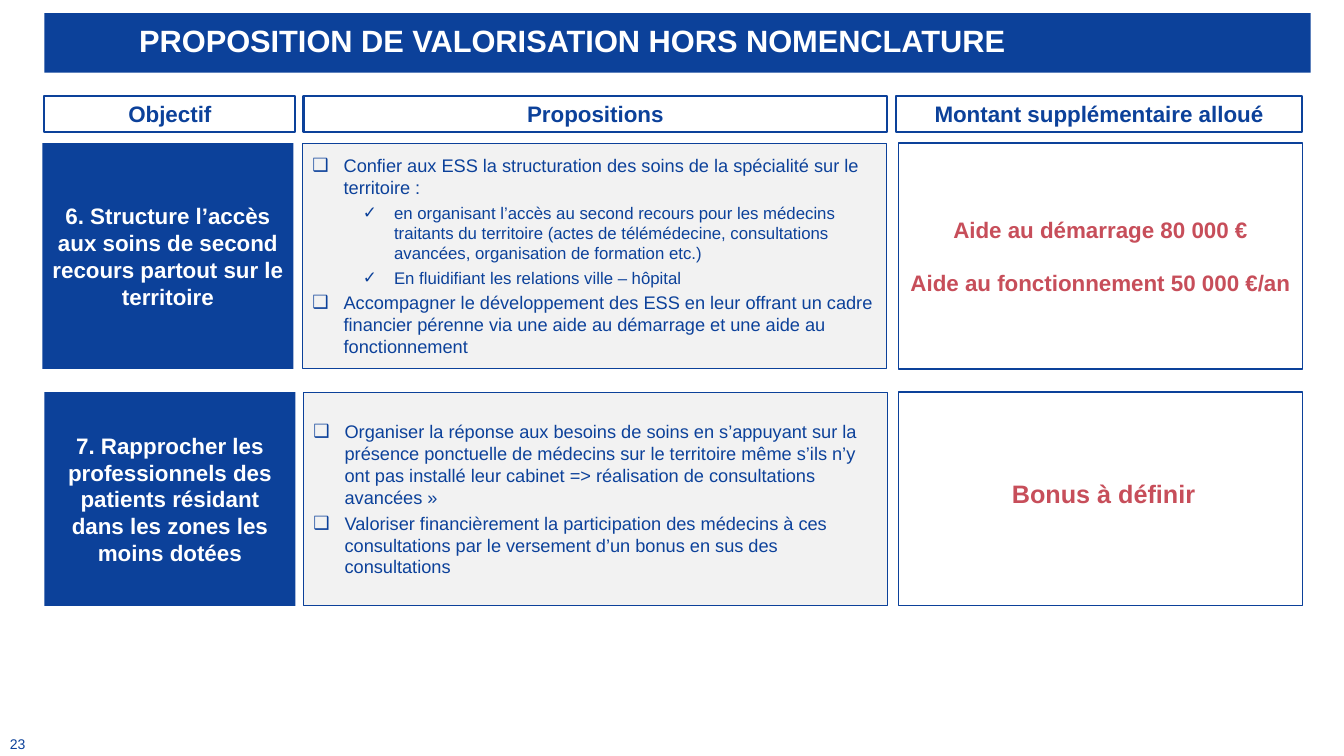
from dataclasses import dataclass

from lxml import etree
from pptx import Presentation
from pptx.dml.color import RGBColor
from pptx.enum.shapes import MSO_SHAPE
from pptx.enum.text import MSO_ANCHOR, PP_ALIGN
from pptx.oxml.ns import qn
from pptx.util import Emu, Pt

RECTANGLE = MSO_SHAPE.RECTANGLE
MIDDLE, BOTTOM = MSO_ANCHOR.MIDDLE, MSO_ANCHOR.BOTTOM
LEFT, CENTER = PP_ALIGN.LEFT, PP_ALIGN.CENTER
EMU_PER_PX = 9144  # 100 px to the inch


@dataclass(frozen=True)
class Theme:
    font: str = "Arial"
    blue: RGBColor = RGBColor(0x0C, 0x41, 0x9A)
    red: RGBColor = RGBColor(0xC7, 0x4E, 0x5A)
    grey: RGBColor = RGBColor(0xF2, 0xF2, 0xF2)
    white: RGBColor = RGBColor(0xFF, 0xFF, 0xFF)
    title: int = 22
    bonus: int = 18
    heading: int = 16
    body: int = 13
    detail: int = 12
    page: int = 10


THEME = Theme()


@dataclass(frozen=True)
class Frame:
    left: int
    top: int
    width: int
    height: int


@dataclass(frozen=True)
class BoxStyle:
    fill: RGBColor | None
    line_width: float = 0


@dataclass(frozen=True)
class Line:
    text: str
    size: int = THEME.heading
    color: RGBColor = THEME.blue
    bold: bool = True
    align: PP_ALIGN = CENTER
    space_before: int = 0
    bullet: str = ""
    indent: int = 0


@dataclass(frozen=True)
class ObjectiveRow:
    lefts: tuple[int, int, int]
    top: int
    height: int
    objective: str
    proposals: list[Line]
    amounts: list[Line]


SOLID = BoxStyle(THEME.blue)
HEADER = BoxStyle(THEME.white, 1.5)
PROPOSAL = BoxStyle(THEME.grey, 0.75)
AMOUNT = BoxStyle(None, 1)
HANGING = 31


def px(length: int) -> Emu:
    return Emu(length * EMU_PER_PX)


def bullet_line(text: str, first: bool = False) -> Line:
    return Line(text, THEME.body, bold=False, align=LEFT, bullet="❑",
                indent=HANGING, space_before=0 if first else 3)


def check_line(text: str) -> Line:
    return Line(text, THEME.detail, bold=False, align=LEFT, bullet="✓",
                indent=81, space_before=3)


def write_lines(text_frame, lines: list[Line]) -> None:
    for index, line in enumerate(lines):
        paragraph = text_frame.paragraphs[0] if index == 0 else text_frame.add_paragraph()
        paragraph.alignment = line.align
        if line.space_before:
            paragraph.space_before = Pt(line.space_before)
        if line.bullet:
            properties = paragraph._p.get_or_add_pPr()
            properties.set("marL", str(px(line.indent)))
            properties.set("indent", str(px(-HANGING)))
            etree.SubElement(properties, qn("a:buFont")).set("typeface", THEME.font)
            etree.SubElement(properties, qn("a:buChar")).set("char", line.bullet)
        run = paragraph.add_run()
        run.text = line.text
        run.font.name = THEME.font
        run.font.size = Pt(line.size)
        run.font.bold = line.bold
        run.font.color.rgb = line.color


def add_box(slide, frame: Frame, style: BoxStyle, lines: list[Line]):
    shape = slide.shapes.add_shape(RECTANGLE, px(frame.left), px(frame.top),
                                   px(frame.width), px(frame.height))
    shape.shadow.inherit = False
    if style.fill is None:
        shape.fill.background()
    else:
        shape.fill.solid()
        shape.fill.fore_color.rgb = style.fill
    if style.line_width:
        shape.line.color.rgb = THEME.blue
        shape.line.width = Pt(style.line_width)
    else:
        shape.line.fill.background()
    shape.text_frame.word_wrap = True
    shape.text_frame.vertical_anchor = MIDDLE
    write_lines(shape.text_frame, lines)
    return shape


def add_text(slide, frame: Frame, line: Line, wrap: bool, anchor: MSO_ANCHOR) -> None:
    box = slide.shapes.add_textbox(px(frame.left), px(frame.top),
                                   px(frame.width), px(frame.height))
    box.text_frame.word_wrap = wrap
    box.text_frame.vertical_anchor = anchor
    write_lines(box.text_frame, [line])


COLUMN_WIDTHS = (249, 579, 401)
HEADERS = [
    (Frame(44, 95, 249, 36), "Objectif"),
    (Frame(301, 95, 579, 36), "Propositions"),
    (Frame(889, 95, 402, 36), "Montant supplémentaire alloué"),
]
ROWS = [
    ObjectiveRow(
        (42, 300, 891), 142, 224,
        "6. Structure l’accès aux soins de second recours partout sur le territoire",
        [
            bullet_line("Confier aux ESS la structuration des soins de la spécialité "
                        "sur le territoire :", first=True),
            check_line("en organisant l’accès au second recours pour les médecins traitants "
                       "du territoire (actes de télémédecine, consultations avancées, "
                       "organisation de formation etc.)"),
            check_line("En fluidifiant les relations ville – hôpital"),
            bullet_line("Accompagner le développement des ESS en leur offrant un cadre financier "
                        "pérenne via une aide au démarrage et une aide au fonctionnement"),
        ],
        [
            Line("Aide au démarrage 80 000 €", color=THEME.red),
            Line("Aide au fonctionnement 50 000 €/an", color=THEME.red, space_before=19),
        ],
    ),
    ObjectiveRow(
        (44, 301, 891), 389, 212,
        "7. Rapprocher les professionnels des patients résidant dans les zones les moins dotées",
        [
            bullet_line("Organiser la réponse aux besoins de soins en s’appuyant sur la présence "
                        "ponctuelle de médecins sur le territoire même s’ils n’y ont pas installé "
                        "leur cabinet => réalisation de consultations avancées »", first=True),
            bullet_line("Valoriser financièrement la participation des médecins à ces "
                        "consultations par le versement d’un bonus en sus des consultations"),
        ],
        [],
    ),
]


def main() -> None:
    presentation = Presentation()
    presentation.slide_width, presentation.slide_height = px(1333), px(750)
    slide = presentation.slides.add_slide(presentation.slide_layouts[6])

    # Title band
    title = add_box(slide, Frame(44, 13, 1256, 59), SOLID, [
        Line("PROPOSITION DE VALORISATION HORS NOMENCLATURE", THEME.title, THEME.white, align=LEFT)])
    title.text_frame.margin_left = px(94)
    title.text_frame.paragraphs[0].line_spacing = 0.9

    # Column headers
    for frame, label in HEADERS:
        add_box(slide, frame, HEADER, [Line(label)])

    # Objective rows
    for row in ROWS:
        cells = ((SOLID, [Line(row.objective, color=THEME.white)]),
                 (PROPOSAL, row.proposals), (AMOUNT, row.amounts))
        for left, width, (style, lines) in zip(row.lefts, COLUMN_WIDTHS, cells):
            add_box(slide, Frame(left, row.top, width, row.height), style, lines)

    # Bonus label and page number
    add_text(slide, Frame(989, 470, 211, 40),
             Line("Bonus à définir", THEME.bonus, THEME.red), False, MIDDLE)
    add_text(slide, Frame(0, 720, 79, 31),
             Line("23", THEME.page, bold=False, align=LEFT), True, BOTTOM)

    presentation.save("out.pptx")


if __name__ == "__main__":
    main()
